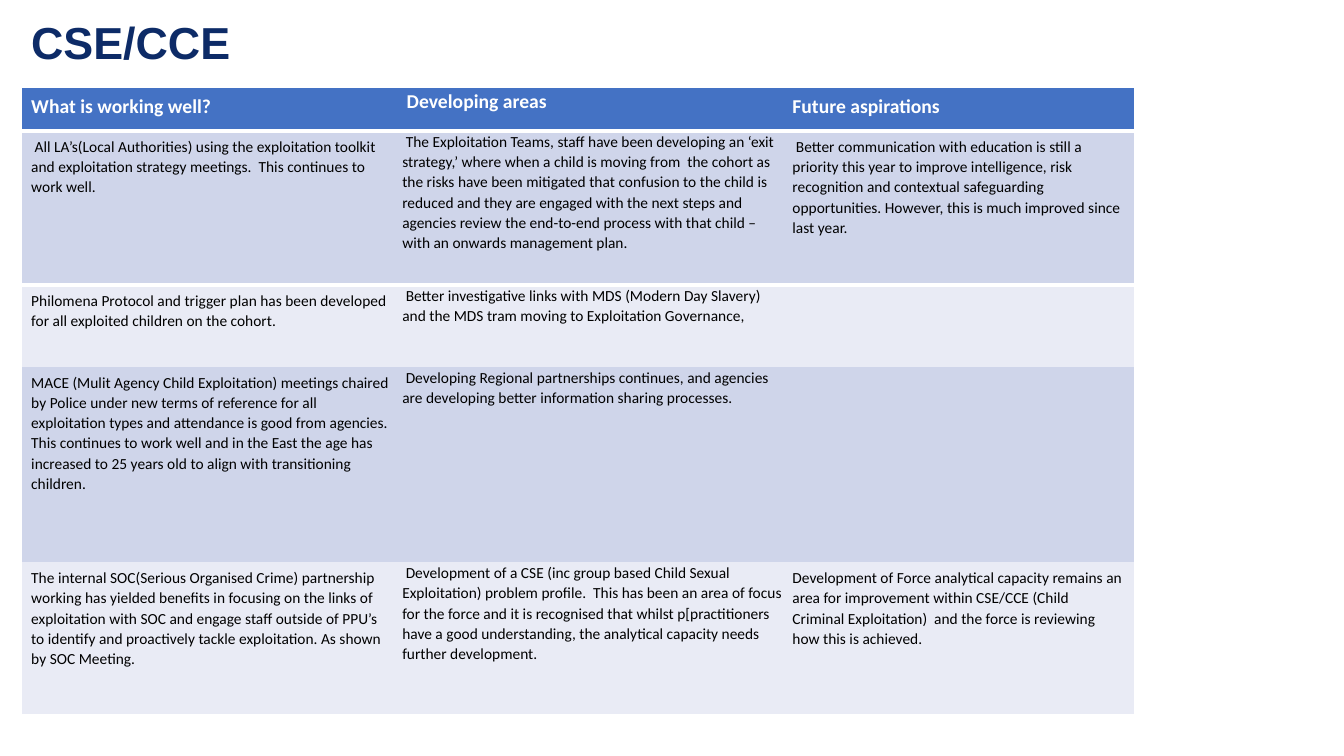
from dataclasses import dataclass

from lxml.etree import SubElement
from pptx import Presentation
from pptx.dml.color import RGBColor
from pptx.enum.text import MSO_ANCHOR
from pptx.oxml.ns import qn
from pptx.util import Emu, Pt

COLOURS = {
    "title": "0D2B67",
    "header": "4472C4",
    "odd_band": "CFD5EA",
    "even_band": "E9EBF5",
    "text": "000000",
    "white": "FFFFFF",
}
PLAIN_TABLE_STYLE = "{2D5ABB26-0587-4C30-8999-92F81FD0307C}"
COLUMN_WIDTHS = (378, 377, 349)
FLUSH_COLUMN = 1  # the middle column has no cell margins


@dataclass(frozen=True)
class ReviewRow:
    height: int
    fill: str
    texts: tuple[str, str, str]
    ink: str = "text"
    size: int = 11
    bold: bool = False


REVIEW_ROWS = (
    ReviewRow(43, "header", (
        "What is working well?", " Developing areas", "Future aspirations",
    ), ink="white", size=14, bold=True),
    ReviewRow(153, "odd_band", (
        " All LA’s(Local Authorities) using the exploitation toolkit and exploitation "
        "strategy meetings.  This continues to work well.",
        " The Exploitation Teams, staff have been developing an ‘exit strategy,’ where "
        "when a child is moving from  the cohort as the risks have been mitigated that "
        "confusion to the child is reduced and they are engaged with the next steps and "
        "agencies review the end-to-end process with that child – with an onwards "
        "management plan.",
        " Better communication with education is still a priority this year to improve "
        "intelligence, risk recognition and contextual safeguarding opportunities. "
        "However, this is much improved since last year.",
    )),
    ReviewRow(81, "even_band", (
        "Philomena Protocol and trigger plan has been developed for all exploited "
        "children on the cohort.",
        " Better investigative links with MDS (Modern Day Slavery) and the MDS tram "
        "moving to Exploitation Governance,",
        "",
    )),
    ReviewRow(194, "odd_band", (
        "MACE (Mulit Agency Child Exploitation) meetings chaired by Police under new "
        "terms of reference for all exploitation types and attendance is good from "
        "agencies.  This continues to work well and in the East the age has increased "
        "to 25 years old to align with transitioning children.",
        " Developing Regional partnerships continues, and agencies are developing better "
        "information sharing processes.",
        "",
    )),
    ReviewRow(151, "even_band", (
        "The internal SOC(Serious Organised Crime) partnership working has yielded "
        "benefits in focusing on the links of exploitation with SOC and engage staff "
        "outside of PPU’s to identify and proactively tackle exploitation. As shown by "
        "SOC Meeting.",
        " Development of a CSE (inc group based Child Sexual Exploitation) problem "
        "profile.  This has been an area of focus for the force and it is recognised "
        "that whilst p[practitioners have a good understanding, the analytical capacity "
        "needs further development.",
        "Development of Force analytical capacity remains an area for improvement within "
        "CSE/CCE (Child Criminal Exploitation)  and the force is reviewing how this is "
        "achieved.",
    )),
)


def px(length: int) -> Emu:
    """100 px make one inch."""
    return Emu(length * 9144)


def rgb(name: str) -> RGBColor:
    return RGBColor.from_string(COLOURS[name])


def style_paragraph(paragraph, font_name: str, size: int, ink: str, bold: bool) -> None:
    font = paragraph.font
    font.name, font.size, font.bold = font_name, Pt(size), bold
    font.color.rgb = rgb(ink)


def add_borders(cell, widths: dict[str, int]) -> None:
    """Draw white borders; the lines must come before the fill."""
    properties = cell._tc.get_or_add_tcPr()
    for side in ("L", "R", "T", "B"):
        if side in widths:
            line = SubElement(properties, qn(f"a:ln{side}"), w=str(Pt(widths[side])))
            fill = SubElement(line, qn("a:solidFill"))
            SubElement(fill, qn("a:srgbClr"), val=COLOURS["white"])


def border_widths(row: int, column: int) -> dict[str, int]:
    widths = {}
    if column == 0:
        widths["L"] = 1
    if column == len(COLUMN_WIDTHS) - 1:
        widths["R"] = 1
    if row == 0:
        widths.update(T=1, B=3)
    if row == 1:
        widths["T"] = 3
    if row == len(REVIEW_ROWS) - 1:
        widths["B"] = 1
    return widths


def add_title(slide) -> None:
    title = slide.shapes.add_textbox(px(21), px(13), px(1104), px(64)).text_frame
    title.word_wrap = True
    title.vertical_anchor = MSO_ANCHOR.MIDDLE
    heading = title.paragraphs[0]
    heading.text = "CSE/CCE"
    heading.line_spacing = 0.9
    style_paragraph(heading, "Arial", 32, "title", True)


def fill_cell(cell, review: ReviewRow, row: int, column: int) -> None:
    if column == FLUSH_COLUMN:
        cell.margin_left = cell.margin_right = cell.margin_top = cell.margin_bottom = 0
    add_borders(cell, border_widths(row, column))
    cell.fill.solid()
    cell.fill.fore_color.rgb = rgb(review.fill)
    paragraph = cell.text_frame.paragraphs[0]
    paragraph.text = review.texts[column]
    paragraph.line_spacing = 1.07
    paragraph.space_after = Pt(8)
    style_paragraph(paragraph, "Calibri", review.size, review.ink, review.bold)


def add_review_table(slide) -> None:
    review_table = slide.shapes.add_table(
        len(REVIEW_ROWS), len(COLUMN_WIDTHS), px(21), px(87),
        px(sum(COLUMN_WIDTHS)), px(sum(review.height for review in REVIEW_ROWS)),
    ).table
    review_table.horz_banding = False
    review_table._tbl.tblPr.find(qn("a:tableStyleId")).text = PLAIN_TABLE_STYLE
    for column, width in enumerate(COLUMN_WIDTHS):
        review_table.columns[column].width = px(width)
    for row, review in enumerate(REVIEW_ROWS):
        review_table.rows[row].height = px(review.height)
        for column in range(len(COLUMN_WIDTHS)):
            fill_cell(review_table.cell(row, column), review, row, column)


def main() -> None:
    presentation = Presentation()
    presentation.slide_width, presentation.slide_height = px(1333), px(750)
    slide = presentation.slides.add_slide(presentation.slide_layouts[6])
    add_title(slide)
    add_review_table(slide)
    presentation.save("out.pptx")


if __name__ == "__main__":
    main()
